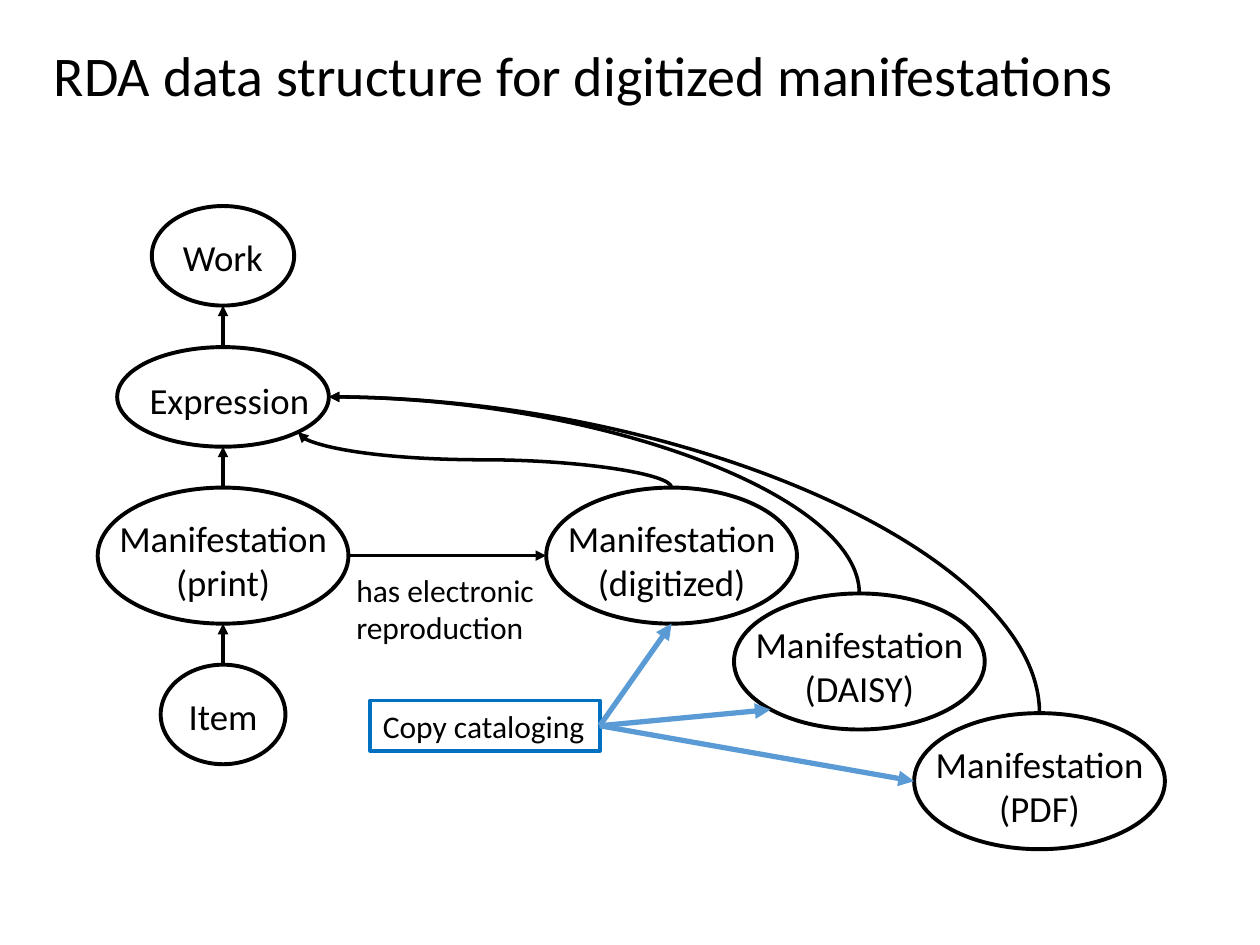
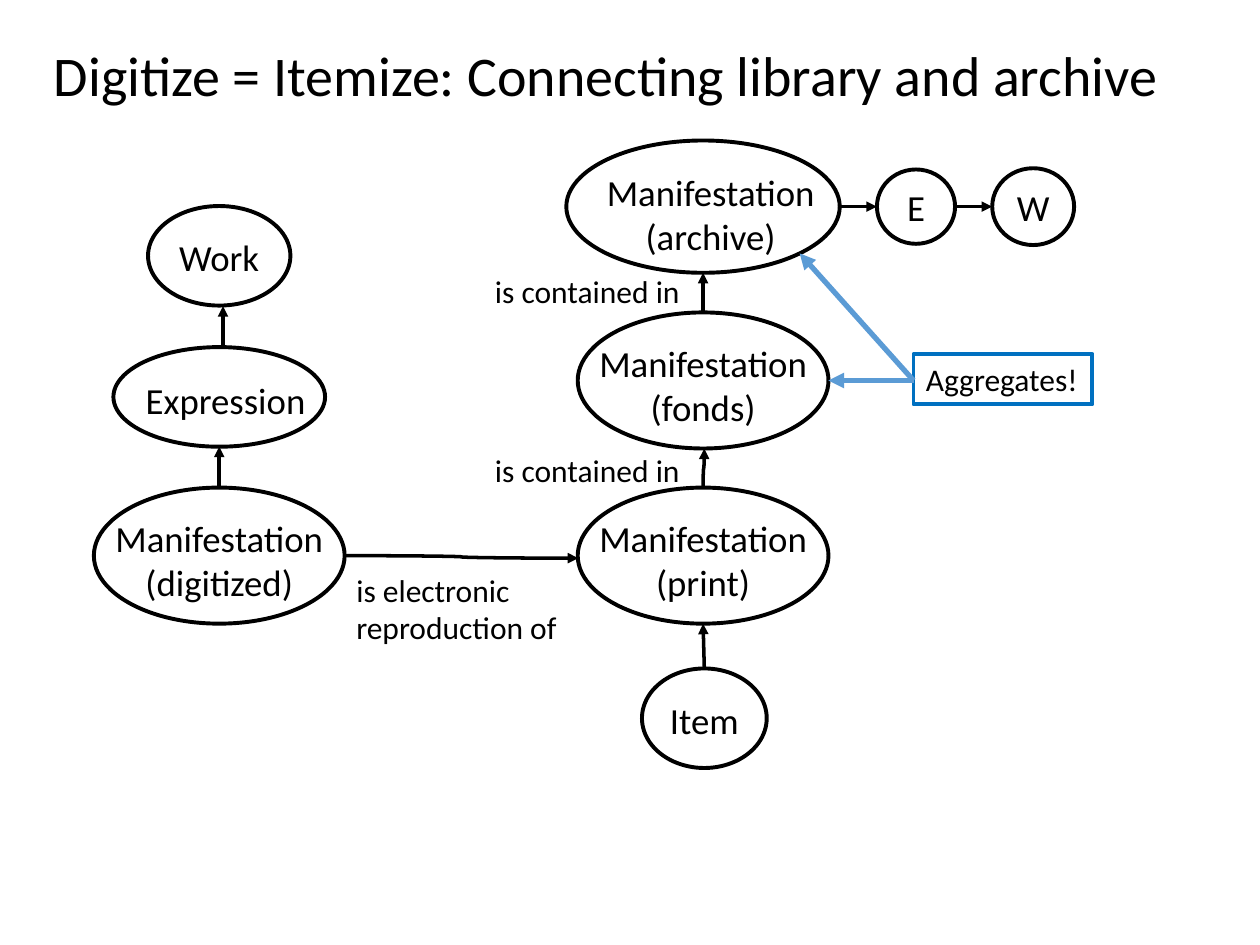
import enum
import math
from dataclasses import dataclass

import pptx
import pptx.dml.color
import pptx.enum.shapes
import pptx.enum.text
import pptx.oxml
import pptx.oxml.ns
import pptx.util
from pptx.util import Inches

BLACK = "000000"
NOTE_BORDER = "0070C0"
NOTE_ARROW = "5B9BD5"
FONT = "Calibri"
OVAL_LINE, ARROW_LINE, NOTE_ARROW_LINE = 2.25, 2, 3
TITLE_SIZE, LABEL_SIZE, NOTE_SIZE = 32, 21, 18
ONE_LINE, TWO_LINES = 0.45, 0.81
MANIFESTATION = (1.99, 1.08)
DIAGONAL = math.sqrt(0.5)

Point = tuple[float, float]


class Route(enum.Enum):
    STRAIGHT = "line"
    ACROSS = "across"
    RISE = "curvedConnector3"
    SWEEP = "curvedConnector2"


@dataclass(frozen=True)
class Oval:
    label: str
    x: float
    y: float
    width: float
    height: float
    label_dx: float = 0
    label_dy: float = 0.01

    def edge(self, across: float, down: float) -> Point:
        """Point on the outline; (1, 0) is the right end, (0, 1) the bottom."""
        return self.x + across * self.width / 2, self.y + down * self.height / 2

    @property
    def top(self) -> Point:
        return self.edge(0, -1)

    @property
    def bottom(self) -> Point:
        return self.edge(0, 1)

    @property
    def left(self) -> Point:
        return self.edge(-1, 0)

    @property
    def right(self) -> Point:
        return self.edge(1, 0)

    @property
    def lower_left(self) -> Point:
        return self.edge(-DIAGONAL, DIAGONAL)

    @property
    def lower_right(self) -> Point:
        return self.edge(DIAGONAL, DIAGONAL)


@dataclass(frozen=True)
class Arrow:
    start: Point
    end: Point
    route: Route = Route.STRAIGHT


@dataclass(frozen=True)
class Caption:
    text: str
    left: float
    top: float
    width: float
    height: float


@dataclass(frozen=True)
class Callout:
    """A framed note with arrows from its frame to what it speaks of."""
    frame: Caption
    source: Point
    targets: list[Point]


@dataclass(frozen=True)
class Diagram:
    title: Caption
    ovals: list[Oval]
    arrows: list[Arrow]
    captions: list[Caption]
    callout: Callout


def rgb(colour: str) -> pptx.dml.color.RGBColor:
    return pptx.dml.color.RGBColor.from_string(colour)


def set_line(line, colour: str, width: float) -> None:
    line.color.rgb = rgb(colour)
    line.width = pptx.util.Pt(width)


def write(shape, text: str, size: float, centred: bool = False) -> None:
    frame = shape.text_frame
    frame.word_wrap = False
    align = pptx.enum.text.PP_ALIGN
    font_format = {"name": FONT, "size": pptx.util.Pt(size)}
    for index, line in enumerate(text.split("\n")):
        para = frame.paragraphs[0] if index == 0 else frame.add_paragraph()
        para.alignment = align.CENTER if centred else align.LEFT
        span = para.add_run()
        span.text = line
        for name, value in font_format.items():
            setattr(span.font, name, value)
        span.font.color.rgb = rgb(BLACK)


def add_outline(page, kind, left: float, top: float, width: float, height: float, colour: str):
    shape = page.shapes.add_shape(kind, Inches(left), Inches(top), Inches(width), Inches(height))
    shape.shadow.inherit = False
    shape.fill.background()
    set_line(shape.line, colour, OVAL_LINE)
    return shape


def draw_caption(page, caption: Caption, size: float, centred: bool = False) -> None:
    box = page.shapes.add_textbox(
        Inches(caption.left), Inches(caption.top), Inches(caption.width), Inches(caption.height)
    )
    write(box, caption.text, size, centred)


def draw_oval(page, oval: Oval) -> None:
    add_outline(page, pptx.enum.shapes.MSO_SHAPE.OVAL, oval.left[0], oval.top[1],
                oval.width, oval.height, BLACK)
    height = TWO_LINES if "\n" in oval.label else ONE_LINE
    label = Caption(oval.label, oval.left[0] + oval.label_dx,
                    oval.y + oval.label_dy - height / 2, oval.width, height)
    draw_caption(page, label, LABEL_SIZE, centred=True)


def turn_upward(connector, arrow: Arrow) -> None:
    """Make a curve leave its start vertically: a quarter turn about its middle."""
    (x1, y1), (x2, y2) = arrow.start, arrow.end
    run, rise = abs(x2 - x1), abs(y2 - y1)
    connector.left = Inches((x1 + x2 - rise) / 2)
    connector.top = Inches((y1 + y2 - run) / 2)
    connector.width, connector.height = Inches(rise), Inches(run)
    properties = connector._element.spPr
    transform = properties.find(pptx.oxml.ns.qn("a:xfrm"))
    transform.attrib.pop("flipH", None)
    transform.set("flipV", "1" if x2 < x1 else "0")
    transform.set("rot", str(270 * 60000))
    properties.find(pptx.oxml.ns.qn("a:prstGeom")).set("prst", arrow.route.value)


def draw_arrow(page, arrow: Arrow, colour: str = BLACK, width: float = ARROW_LINE) -> None:
    kinds = pptx.enum.shapes.MSO_CONNECTOR
    kind = kinds.STRAIGHT if arrow.route is Route.STRAIGHT else kinds.CURVE
    ends = [Inches(value) for value in (*arrow.start, *arrow.end)]
    connector = page.shapes.add_connector(kind, *ends)
    if arrow.route in (Route.RISE, Route.SWEEP):
        turn_upward(connector, arrow)
    set_line(connector.line, colour, width)
    head = pptx.oxml.parse_xml(f'<a:tailEnd {pptx.oxml.ns.nsdecls("a")} type="triangle"/>')
    connector.line._get_or_add_ln().append(head)
    no_effect = pptx.oxml.parse_xml(f'<a:effectLst {pptx.oxml.ns.nsdecls("a")}/>')
    connector._element.spPr.append(no_effect)


def draw_callout(page, callout: Callout) -> None:
    frame = callout.frame
    box = add_outline(page, pptx.enum.shapes.MSO_SHAPE.RECTANGLE, frame.left, frame.top,
                      frame.width, frame.height, NOTE_BORDER)
    write(box, frame.text, NOTE_SIZE)
    for target in callout.targets:
        draw_arrow(page, Arrow(callout.source, target), NOTE_ARROW, NOTE_ARROW_LINE)


def draw_diagram(deck, diagram: Diagram) -> None:
    page = deck.slides.add_slide(deck.slide_layouts[6])
    draw_caption(page, diagram.title, TITLE_SIZE)
    for oval in diagram.ovals:
        draw_oval(page, oval)
    for arrow in diagram.arrows:
        draw_arrow(page, arrow)
    for caption in diagram.captions:
        draw_caption(page, caption, NOTE_SIZE)
    draw_callout(page, diagram.callout)


def title(text: str, width: float) -> Caption:
    return Caption(text, 0.33, 0.27, width, 0.64)


def work_at(x: float) -> Oval:
    return Oval("Work", x, 2.03, 1.13, 0.79)


def expression_at(x: float) -> Oval:
    return Oval("Expression", x, 3.15, 1.68, 0.79, 0.05, 0.02)


def manifestation(kind: str, x: float, y: float) -> Oval:
    return Oval(f"Manifestation\n({kind})", x, y, *MANIFESTATION, label_dy=0.04)


def item_at(x: float, y: float) -> Oval:
    return Oval("Item", x, y, 0.99, 0.79)


def digitized_manifestations() -> Diagram:
    work, expression = work_at(1.77), expression_at(1.77)
    printed = manifestation("print", 1.77, 4.41)
    item = item_at(1.77, 5.67)
    digitized = manifestation("digitized", 5.33, 4.41)
    daisy = manifestation("DAISY", 6.82, 5.25)
    pdf = manifestation("PDF", 8.25, 6.2)
    chain = [work, expression, printed, item]
    return Diagram(
        title("RDA data structure for digitized manifestations", 8.71),
        [*chain, digitized, pdf, daisy],
        [
            *(Arrow(lower.top, upper.bottom) for upper, lower in zip(chain, chain[1:])),
            Arrow(printed.right, digitized.left),
            Arrow(digitized.top, expression.lower_right, Route.RISE),
            *(Arrow(oval.top, expression.right, Route.SWEEP) for oval in (pdf, daisy)),
        ],
        [Caption("has electronic\nreproduction", 2.73, 4.48, 1.63, 0.71)],
        Callout(Caption("Copy cataloging", 2.94, 5.56, 1.82, 0.4), (4.76, 5.76),
                [pdf.left, digitized.bottom, daisy.lower_left]),
    )


def library_and_archive() -> Diagram:
    work, expression = work_at(1.74), expression_at(1.74)
    digitized = manifestation("digitized", 1.74, 4.41)
    printed = manifestation("print", 5.58, 4.41)
    fonds = manifestation("fonds", 5.58, 3.02)
    item = item_at(5.59, 5.7)
    archive = Oval("Manifestation\n(archive)", 5.58, 1.64, 2.17, 1.05, 0.06, 0.06)
    archive_expression = Oval("E", 7.27, 1.64, 0.62, 0.59, label_dy=0)
    archive_work = Oval("W", 8.2, 1.64, 0.65, 0.61, label_dy=0)
    return Diagram(
        title("Digitize = Itemize: Connecting library and archive", 9.07),
        [work, expression, digitized, printed, item, fonds,
         archive, archive_expression, archive_work],
        [
            Arrow((1.77, 2.75), (1.77, 2.43)),
            Arrow(digitized.top, expression.bottom),
            Arrow(item.top, printed.bottom),
            Arrow(printed.top, (5.59, 3.56), Route.RISE),
            Arrow(fonds.top, archive.bottom),
            Arrow(digitized.right, (4.59, 4.43), Route.ACROSS),
            Arrow(archive.right, archive_expression.left),
            Arrow(archive_expression.right, archive_work.left),
        ],
        [
            Caption("is electronic\nreproduction of", 2.73, 4.48, 1.86, 0.71),
            *(Caption("is contained in", 3.83, top, 1.69, 0.4) for top in (2.11, 3.53)),
        ],
        Callout(Caption("Aggregates!", 7.25, 2.81, 1.42, 0.4), (7.25, 3.02),
                [fonds.right, archive.lower_right]),
    )


def main() -> None:
    deck = pptx.Presentation()
    deck.slide_width, deck.slide_height = Inches(10), Inches(7.5)
    for diagram in (digitized_manifestations(), library_and_archive()):
        draw_diagram(deck, diagram)
    deck.save("out.pptx")


if __name__ == "__main__":
    main()
